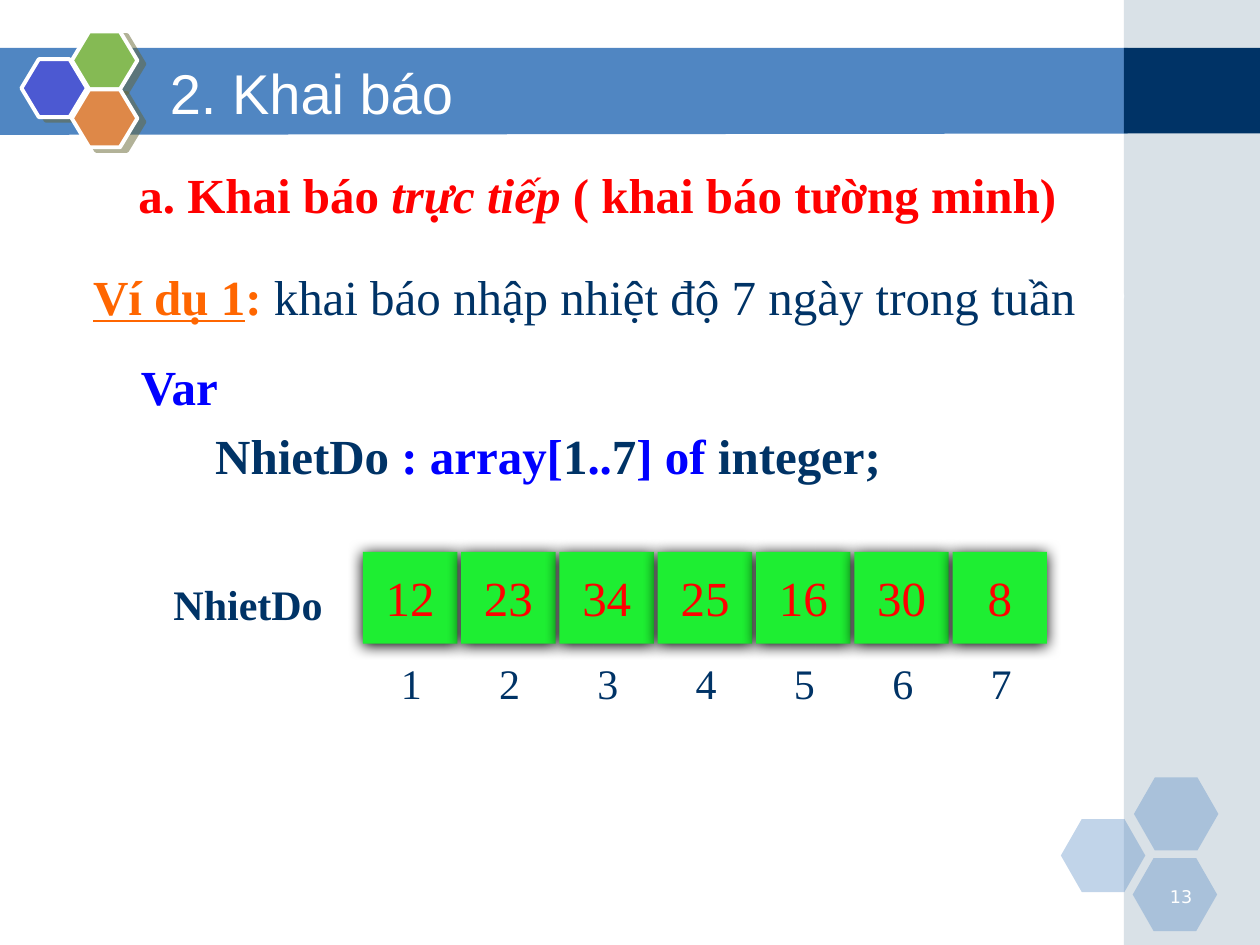
from typing import NamedTuple
from lxml.etree import SubElement
from pptx import Presentation
from pptx.dml.color import RGBColor
from pptx.enum.shapes import MSO_SHAPE
from pptx.enum.text import MSO_ANCHOR, PP_ALIGN
from pptx.oxml.ns import qn
from pptx.util import Inches, Pt

WHITE = RGBColor(0xFF, 0xFF, 0xFF)
BLACK = RGBColor(0, 0, 0)
STEEL = RGBColor(0x50, 0x86, 0xC2)
MIST = RGBColor(0xA0, 0xB5, 0xC4)
NAVY = RGBColor(0, 0x33, 0x66)
INDIGO = RGBColor(0x4C, 0x59, 0xD2)
LEAF = RGBColor(0x85, 0xBA, 0x54)
CLAY = RGBColor(0xDE, 0x88, 0x48)
OLIVE = RGBColor(0x66, 0x66, 0x33)
BLUE = RGBColor(0, 0, 0xFF)
ORANGE = RGBColor(0xFF, 0x66, 0)
RED = RGBColor(0xFF, 0, 0)
GREEN = RGBColor(0x1E, 0xEE, 0x32)
SERIF = "Times New Roman"


class Box(NamedTuple):
    left: float
    top: float
    width: float
    height: float


class Run(NamedTuple):
    text: str
    color: RGBColor
    size: int = 28
    bold: bool = False
    slant: bool = False
    under: bool = False
    face: str = SERIF


class Shade(NamedTuple):
    color: RGBColor
    alpha: int
    blur: float
    dist: float
    angle: int


class Hexagon(NamedTuple):
    left: float
    top: float
    color: RGBColor


LOGO_SHADE = Shade(OLIVE, 50, 0, 4.5, 27)
CELL_SHADE = Shade(BLACK, 100, 8.5, 1, 90)


def place(box: Box) -> list:
    return [Inches(side) for side in box]


def set_alpha(node, alpha: int) -> None:
    SubElement(node, qn("a:alpha")).set("val", str(alpha * 1000))


def cast(shape, shade: Shade) -> None:
    effects = shape._element.spPr.find(qn("a:effectLst"))
    outer = SubElement(effects, qn("a:outerShdw"))
    outer.set("blurRad", str(Pt(shade.blur)))
    outer.set("dist", str(Pt(shade.dist)))
    outer.set("dir", str(shade.angle * 60000))
    outer.set("algn", "ctr")
    outer.set("rotWithShape", "0")
    color = SubElement(outer, qn("a:srgbClr"))
    color.set("val", str(shade.color))
    set_alpha(color, shade.alpha)


def paint(shape, fill: RGBColor, alpha: int = 100) -> None:
    shape.shadow.inherit = False
    shape.line.fill.background()
    shape.fill.solid()
    shape.fill.fore_color.rgb = fill
    if alpha < 100:
        set_alpha(shape._element.spPr.find(qn("a:solidFill"))[0], alpha)


def add_form(shapes, kind: MSO_SHAPE, box: Box, fill: RGBColor, alpha: int = 100):
    shape = shapes.add_shape(kind, *place(box))
    paint(shape, fill, alpha)
    return shape


def add_runs(para, runs: list[Run]) -> None:
    for item in runs:
        run = para.add_run()
        run.text = item.text
        font = run.font
        font.name, font.size = item.face, Pt(item.size)
        font.bold, font.italic, font.underline = item.bold, item.slant, item.under
        font.color.rgb = item.color


def add_text(shapes, box: Box, runs: list[Run], align=PP_ALIGN.LEFT, anchor=MSO_ANCHOR.TOP):
    frame = shapes.add_textbox(*place(box)).text_frame
    frame.word_wrap = True
    frame.vertical_anchor = anchor
    para = frame.paragraphs[0]
    para.alignment = align
    add_runs(para, runs)
    return frame


def add_frame(shapes) -> None:
    pen = shapes.build_freeform(Inches(-0.01), Inches(0.38), scale=1.0)
    points = [(8.95, 0.38), (8.95, 1.06), (-0.01, 1.07)]
    pen.add_line_segments([(Inches(x), Inches(y)) for x, y in points], close=True)
    paint(pen.convert_to_shape(), STEEL)

    side = shapes.add_group_shape().shapes
    add_form(side, MSO_SHAPE.RECTANGLE, Box(8.92, 0, 1.08, 7.5), MIST, 40)
    add_form(side, MSO_SHAPE.RECTANGLE, Box(8.92, 0.38, 1.08, 0.68), NAVY)

    for left, top in [(8.42, 6.5), (9, 6.17), (8.99, 6.81)]:
        tile = add_form(shapes, MSO_SHAPE.HEXAGON, Box(left, top, 0.67, 0.58), STEEL, 35)
        tile.adjustments[0] = 0.286

    badge = shapes.add_group_shape().shapes
    for part in [Hexagon(0.17, 0.47, INDIGO), Hexagon(0.57, 0.25, LEAF), Hexagon(0.57, 0.71, CLAY)]:
        tile = add_form(badge, MSO_SHAPE.HEXAGON, Box(part.left, part.top, 0.52, 0.46), part.color)
        tile.adjustments[0] = 0.3
        tile.line.color.rgb = WHITE
        tile.line.width = Pt(2.25)
        cast(tile, LOGO_SHADE)


def add_code(shapes) -> None:
    frame = add_text(shapes, Box(1.02, 2.78, 7.56, 1.28), [Run("Var", BLUE, bold=True)])
    para = frame.add_paragraph()
    para.space_before = Pt(5.6)
    props = para._p.get_or_add_pPr()
    props.set("marL", "0")
    props.set("indent", str(Inches(0.59)))
    parts = [("NhietDo ", NAVY), (": array[", BLUE), ("1", NAVY), ("..", BLUE),
             ("7", NAVY), ("] of", BLUE), (" integer;", NAVY)]
    add_runs(para, [Run(text, color, bold=True) for text, color in parts])


def add_sample(shapes) -> None:
    arrow = shapes.add_shape(MSO_SHAPE.RIGHT_ARROW, *place(Box(0.64, 1.95, 8.27, 0.8)))
    arrow.shadow.inherit = False
    arrow.fill.background()
    arrow.line.color.rgb = WHITE
    arrow.line.width = Pt(2)
    arrow.adjustments[0] = 0.7
    arrow.adjustments[1] = 0.233
    frame = arrow.text_frame
    frame.vertical_anchor = MSO_ANCHOR.MIDDLE
    para = frame.paragraphs[0]
    para.alignment = PP_ALIGN.LEFT
    add_runs(para, [
        Run("Ví dụ 1", ORANGE, bold=True, under=True),
        Run(": ", ORANGE, bold=True),
        Run("khai báo nhập nhiệt độ 7 ngày trong tuần", NAVY),
    ])


def add_cells(shapes, values: list[int]) -> None:
    lefts = [2.88 + 0.78 * spot for spot in range(len(values))]
    for left in lefts:
        cell = add_form(shapes, MSO_SHAPE.RECTANGLE, Box(left, 4.38, 0.75, 0.73), GREEN)
        cast(cell, CELL_SHADE)
    for spot, (left, value) in enumerate(zip(lefts, values), 1):
        add_text(shapes, Box(left + 0.01, 5.14, 0.75, 0.56), [Run(str(spot), NAVY, 24)],
                 PP_ALIGN.CENTER, MSO_ANCHOR.MIDDLE)
        add_text(shapes, Box(left, 4.37, 0.75, 0.73), [Run(str(value), RED)],
                 PP_ALIGN.CENTER, MSO_ANCHOR.MIDDLE)


def main() -> None:
    deck = Presentation()
    deck.slide_width, deck.slide_height = Inches(10), Inches(7.5)
    shapes = deck.slides.add_slide(deck.slide_layouts[6]).shapes
    add_frame(shapes)
    add_code(shapes)
    add_sample(shapes)
    add_text(shapes, Box(0.26, 4.54, 2.4, 0.5), [Run("NhietDo", NAVY, 24, True)], PP_ALIGN.RIGHT)
    add_text(shapes, Box(1, 1.26, 7.92, 0.57), [
        Run("a. Khai báo ", RED, bold=True),
        Run("trực tiếp", RED, bold=True, slant=True),
        Run(" ( khai báo tường minh)", RED, bold=True),
    ])
    add_text(shapes, Box(1.25, 0.42, 7.33, 0.62), [Run("2. Khai báo", WHITE, 32, face="Arial")],
             anchor=MSO_ANCHOR.MIDDLE)
    add_text(shapes, Box(9.06, 6.98, 0.5, 0.25), [Run("13", WHITE, 10, face="DejaVu Sans")],
             PP_ALIGN.RIGHT)
    add_cells(shapes, [12, 23, 34, 25, 16, 30, 8])
    deck.save("out.pptx")


if __name__ == "__main__":
    main()
